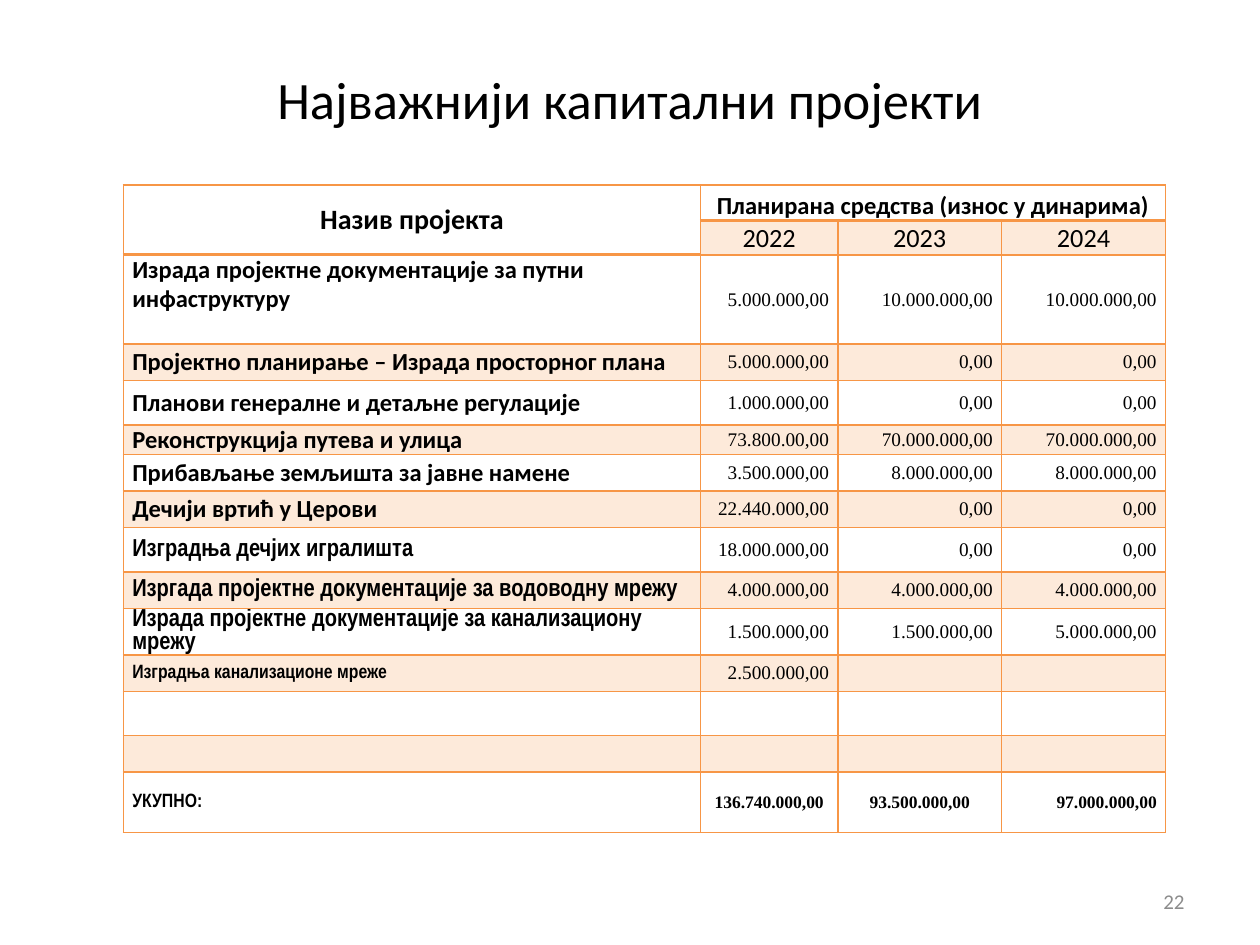
import pptx
import pptx.util
import pptx.dml.color
import pptx.enum.text
from lxml import etree

Inches, Pt = pptx.util.Inches, pptx.util.Pt
ALIGN = pptx.enum.text.PP_ALIGN
ANCHOR = pptx.enum.text.MSO_ANCHOR
AUTO_SIZE = pptx.enum.text.MSO_AUTO_SIZE

COLORS = {"text": "000000", "muted": "8C8C8C", "line": "F79646",
          "band": "FDEADA", "plain": "FFFFFF"}
CALIBRI, NARROW, TIMES = "Calibri", "Arial Narrow", "Times New Roman"

COLUMN_WIDTHS = [4.58, 1.09, 1.3, 1.3]
HEADER_HEIGHTS = [0.28, 0.27]
YEARS = ["2022", "2023", "2024"]

# Row height, project name, name font, name size, amounts per year
PROJECTS = [
    (0.71, "Израда пројектне документације за путни инфаструктуру", CALIBRI, 14,
     ["5.000.000,00", "10.000.000,00", "10.000.000,00"]),
    (0.29, "Пројектно планирање – Израда просторног плана", CALIBRI, 14,
     ["5.000.000,00", "0,00", "0,00"]),
    (0.35, "Планови генералне и детаљне регулације", CALIBRI, 14,
     ["1.000.000,00", "0,00", "0,00"]),
    (0.23, "Реконструкција путева и улица", CALIBRI, 14,
     ["73.800.00,00", "70.000.000,00", "70.000.000,00"]),
    (0.29, "Прибављање земљишта за јавне намене", CALIBRI, 14,
     ["3.500.000,00", "8.000.000,00", "8.000.000,00"]),
    (0.29, "Дечији вртић у Церови", CALIBRI, 14,
     ["22.440.000,00", "0,00", "0,00"]),
    (0.35, "Изградња дечјих игралишта", NARROW, 14,
     ["18.000.000,00", "0,00", "0,00"]),
    (0.29, "Изргада пројектне документације за водоводну мрежу", NARROW, 14,
     ["4.000.000,00", "4.000.000,00", "4.000.000,00"]),
    (0.37, "Израда пројектне документације за канализациону мрежу", NARROW, 14,
     ["1.500.000,00", "1.500.000,00", "5.000.000,00"]),
    (0.29, "Изградња канализационе мреже", NARROW, 11,
     ["2.500.000,00", "", ""]),
    (0.35, "", NARROW, 11, ["", "", ""]),
    (0.29, "", NARROW, 11, ["", "", ""]),
]
TOTAL_HEIGHT = 0.48
TOTALS = [("136.740.000,00", ALIGN.CENTER), ("93.500.000,00", ALIGN.CENTER),
          ("97.000.000,00", ALIGN.RIGHT)]


def rgb(name):
    return pptx.dml.color.RGBColor.from_string(COLORS[name])


def write(frame, text, size=11, font=CALIBRI, bold=False, color="text",
          align=ALIGN.LEFT):
    paragraph = frame.paragraphs[0]
    paragraph.alignment = align
    paragraph.font.size = Pt(size)
    if text:
        run = paragraph.add_run()
        run.text = text
        run.font.size, run.font.name, run.font.bold = Pt(size), font, bold
        run.font.color.rgb = rgb(color)


def style_cell(cell, fill="plain", top=1, bottom=1, anchor=ANCHOR.MIDDLE):
    cell.margin_left = cell.margin_right = Inches(0.07)
    cell.margin_top = cell.margin_bottom = 0
    cell.vertical_anchor = anchor
    # Borders come before the fill in the cell properties
    namespace = pptx.oxml.ns.nsdecls("a")
    properties = cell._tc.get_or_add_tcPr()
    for side, width in (("L", 1), ("R", 1), ("T", top), ("B", bottom)):
        properties.append(pptx.oxml.parse_xml(
            f'<a:ln{side} {namespace} w="{Pt(width)}"><a:solidFill>'
            f'<a:srgbClr val="{COLORS["line"]}"/></a:solidFill></a:ln{side}>'))
    cell.fill.solid()
    cell.fill.fore_color.rgb = rgb(fill)


def place_title(slide, left, top, width, height):
    title = slide.shapes.title
    title.left, title.top, title.width, title.height = left, top, width, height
    title.text_frame.auto_size = AUTO_SIZE.NONE
    title.text_frame.vertical_anchor = ANCHOR.MIDDLE
    write(title.text_frame, "Најважнији капитални пројекти", size=30,
          align=ALIGN.CENTER)


def fill_header(table):
    for column in range(4):
        in_years = column > 0
        style_cell(table.cell(0, column), bottom=2,
                   anchor=ANCHOR.BOTTOM if in_years else ANCHOR.MIDDLE)
        style_cell(table.cell(1, column), fill="band" if in_years else "plain",
                   top=2, bottom=1 if in_years else 2, anchor=ANCHOR.BOTTOM)
    table.cell(0, 0).merge(table.cell(1, 0))
    table.cell(0, 1).merge(table.cell(0, 3))
    write(table.cell(0, 0).text_frame, "Назив пројекта", size=16, bold=True,
          align=ALIGN.CENTER)
    write(table.cell(0, 1).text_frame, "Планирана средства (износ у динарима)",
          size=14, bold=True, align=ALIGN.CENTER)
    for column, year in enumerate(YEARS, 1):
        write(table.cell(1, column).text_frame, year, size=15,
              align=ALIGN.CENTER)


def fill_projects(table, first_row):
    for index, (_, name, font, size, amounts) in enumerate(PROJECTS):
        row = first_row + index
        band = "band" if index % 2 else "plain"
        name_cell = table.cell(row, 0)
        style_cell(name_cell, band, top=1 if index else 2,
                   anchor=ANCHOR.MIDDLE if index else ANCHOR.TOP)
        write(name_cell.text_frame, name, size=size, font=font, bold=True)
        for column, amount in enumerate(amounts, 1):
            style_cell(table.cell(row, column), band)
            write(table.cell(row, column).text_frame, amount, font=TIMES,
                  align=ALIGN.RIGHT)


def fill_totals(table, row):
    style_cell(table.cell(row, 0))
    write(table.cell(row, 0).text_frame, "УКУПНО:", font=NARROW, bold=True)
    for column, (amount, align) in enumerate(TOTALS, 1):
        style_cell(table.cell(row, column))
        write(table.cell(row, column).text_frame, amount, size=10, font=TIMES,
              bold=True, align=align)


def place_projects_table(slide, left, top, width, height):
    row_heights = HEADER_HEIGHTS + [project[0] for project in PROJECTS]
    row_heights.append(TOTAL_HEIGHT)
    table = slide.shapes.add_table(len(row_heights), len(COLUMN_WIDTHS),
                                   left, top, width, height).table
    table.first_row = table.horz_banding = False
    for column, column_width in zip(table.columns, COLUMN_WIDTHS):
        column.width = Inches(column_width)
    for row, row_height in zip(table.rows, row_heights):
        row.height = Inches(row_height)
    fill_header(table)
    fill_projects(table, len(HEADER_HEIGHTS))
    fill_totals(table, len(row_heights) - 1)


def place_page_number(slide, left, top, width, height):
    frame = slide.shapes.add_textbox(left, top, width, height).text_frame
    frame.word_wrap = True
    frame.vertical_anchor = ANCHOR.MIDDLE
    write(frame, "22", size=12, color="muted", align=ALIGN.RIGHT)


def main():
    deck = pptx.Presentation()
    deck.slide_width, deck.slide_height = Inches(10), Inches(7.5)
    slide = deck.slides.add_slide(deck.slide_layouts.get_by_name("Title Only"))
    place_projects_table(slide, Inches(0.98), Inches(1.47), Inches(8.27),
                         Inches(5.1))
    place_page_number(slide, Inches(7.17), Inches(6.95), Inches(2.33),
                      Inches(0.4))
    place_title(slide, Inches(0.5), Inches(0.3), Inches(9), Inches(0.96))
    deck.save("out.pptx")


if __name__ == "__main__":
    main()
